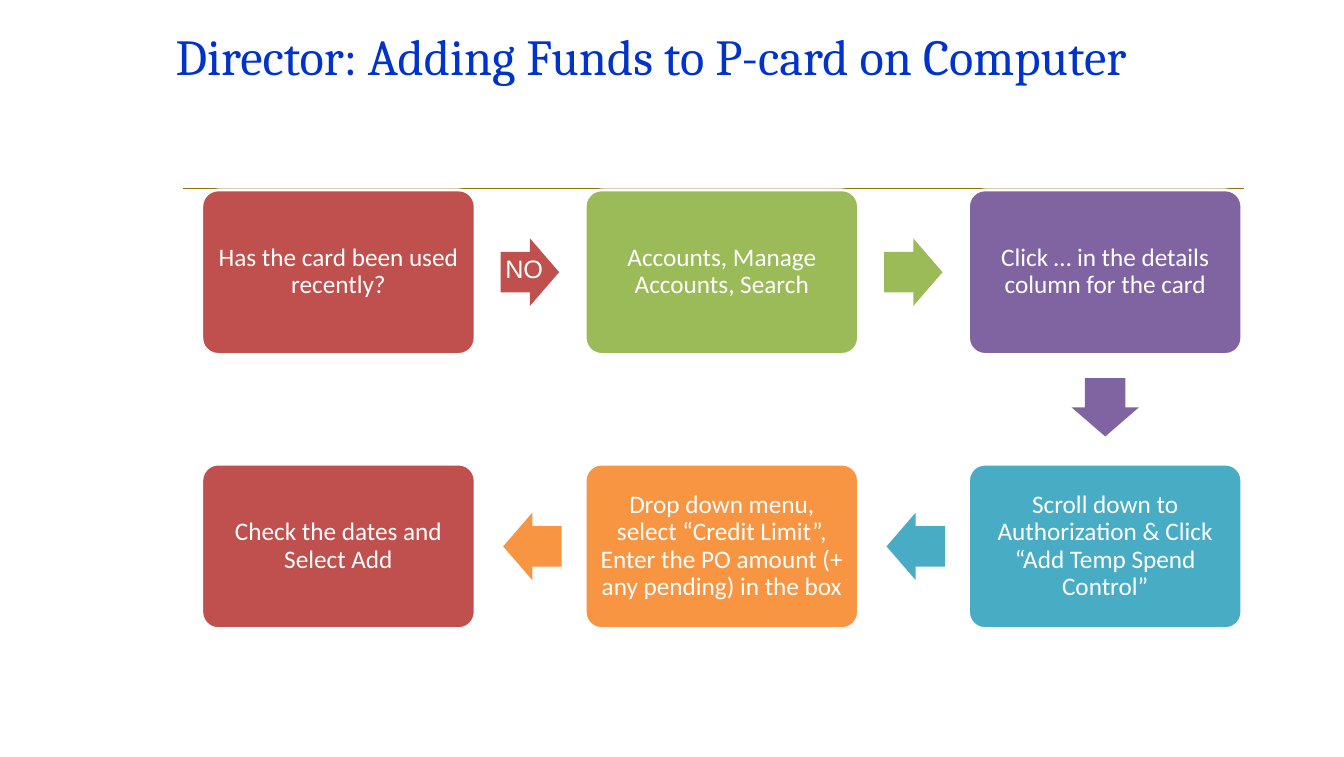
from pptx import Presentation
from pptx.dml.color import RGBColor
from pptx.enum.shapes import MSO_CONNECTOR, MSO_SHAPE
from pptx.enum.text import MSO_ANCHOR, PP_ALIGN
from pptx.oxml.ns import qn
from pptx.util import Cm, Pt

ROUNDED, ARROW = MSO_SHAPE.ROUNDED_RECTANGLE, MSO_SHAPE.RIGHT_ARROW
STRAIGHT = MSO_CONNECTOR.STRAIGHT
TOP, MIDDLE = MSO_ANCHOR.TOP, MSO_ANCHOR.MIDDLE
LEFT, CENTER = PP_ALIGN.LEFT, PP_ALIGN.CENTER

COLORS = {
    "title": "0033CC", "rule": "986E06", "white": "FFFFFF", "red": "BF504D",
    "green": "9BBB59", "purple": "8064A2", "teal": "49ACC5", "orange": "F79543",
}
GRID_LEFT, GRID_TOP = 5.08, 4.78
COLUMN_PITCH, ROW_PITCH = 9.65, 6.9
BOX_WIDTH, BOX_HEIGHT = 6.88, 4.14
ARROW_WIDTH, ARROW_HEIGHT = 1.47, 1.7
ARROW_OFFSETS = {0: (4.82, 0), 90: (0, 3.4), 180: (-4.77, 0)}
STEPS = [
    (0, 0, "Has the card been used recently?", "red", 0),
    (1, 0, "Accounts, Manage Accounts, Search", "green", 0),
    (2, 0, "Click … in the details column for the card", "purple", 90),
    (2, 1, "Scroll down to Authorization & Click “Add Temp Spend Control”", "teal", 180),
    (1, 1, "Drop down menu, select “Credit Limit”, Enter the PO amount (+ any pending) in the box",
     "orange", 180),
    (0, 1, "Check the dates and Select Add", "red", None),
]


class FlowSlide:
    """Draws the styled elements of a process flow on one slide."""

    def __init__(self, presentation):
        self.slide = presentation.slides.add_slide(presentation.slide_layouts[5])

    def color(self, name):
        return RGBColor.from_string(COLORS[name])

    def set_text(self, shape, text, font, size, color, align, anchor, margins):
        frame = shape.text_frame
        frame.text = text
        frame.word_wrap = True
        frame.vertical_anchor = anchor
        frame.margin_left = frame.margin_right = Cm(margins[0])
        frame.margin_top = frame.margin_bottom = Cm(margins[1])
        paragraph = frame.paragraphs[0]
        paragraph.alignment = align
        run_font = paragraph.runs[0].font
        run_font.name, run_font.size = font, Pt(size)
        run_font.color.rgb = self.color(color)
        return paragraph

    def title(self, text):
        shape = self.slide.shapes.title
        shape.left, shape.top, shape.width, shape.height = Cm(4.42), Cm(0.64), Cm(26.49), Cm(1.55)
        self.set_text(shape, text, "Cambria", 36, "title", LEFT, TOP, (0, 0))

    def rule(self, left, right, top):
        line = self.slide.shapes.add_connector(STRAIGHT, Cm(left), Cm(top), Cm(right), Cm(top))
        line.line.color.rgb = self.color("rule")
        line.line.width = Pt(1)
        properties = line._element.spPr
        properties.append(properties.makeelement(qn("a:effectLst"), {}))

    def filled(self, kind, center_x, center_y, width, height, color):
        shape = self.slide.shapes.add_shape(
            kind, Cm(center_x - width / 2), Cm(center_y - height / 2), Cm(width), Cm(height))
        shape.shadow.inherit = False
        shape.fill.solid()
        shape.fill.fore_color.rgb = self.color(color)
        return shape

    def box(self, center_x, center_y, text, color):
        shape = self.filled(ROUNDED, center_x, center_y, BOX_WIDTH, BOX_HEIGHT, color)
        shape.adjustments[0] = 0.1
        shape.line.color.rgb = self.color("white")
        shape.line.width = Pt(2)
        paragraph = self.set_text(shape, text, "Calibri", 18, "white", CENTER, MIDDLE, (0.18, 0.18))
        paragraph.line_spacing = 0.9

    def arrow(self, center_x, center_y, color, rotation):
        shape = self.filled(ARROW, center_x, center_y, ARROW_WIDTH, ARROW_HEIGHT, color)
        shape.adjustments[0], shape.adjustments[1] = 0.6, 0.5
        shape.line.fill.background()
        shape.rotation = rotation

    def step(self, column, row, text, color, direction):
        center_x = GRID_LEFT + column * COLUMN_PITCH + BOX_WIDTH / 2
        center_y = GRID_TOP + row * ROW_PITCH + BOX_HEIGHT / 2
        self.box(center_x, center_y, text, color)
        if direction is not None:
            offset_x, offset_y = ARROW_OFFSETS[direction]
            self.arrow(center_x + offset_x, center_y + offset_y, color, direction)

    def label(self, left, top, width, height, text):
        shape = self.slide.shapes.add_textbox(Cm(left), Cm(top), Cm(width), Cm(height))
        self.set_text(shape, text, "Arial", 18, "white", LEFT, TOP, (0.25, 0.13))


def main():
    presentation = Presentation()
    presentation.slide_width, presentation.slide_height = Cm(33.83), Cm(19.05)
    flow = FlowSlide(presentation)
    flow.title("Director: Adding Funds to P-card on Computer")
    flow.rule(4.6, 31.32, 4.75)
    for step in STEPS:
        flow.step(*step)
    flow.label(12.47, 6.25, 1.7, 1.07, "NO")
    presentation.save("out.pptx")


if __name__ == "__main__":
    main()
